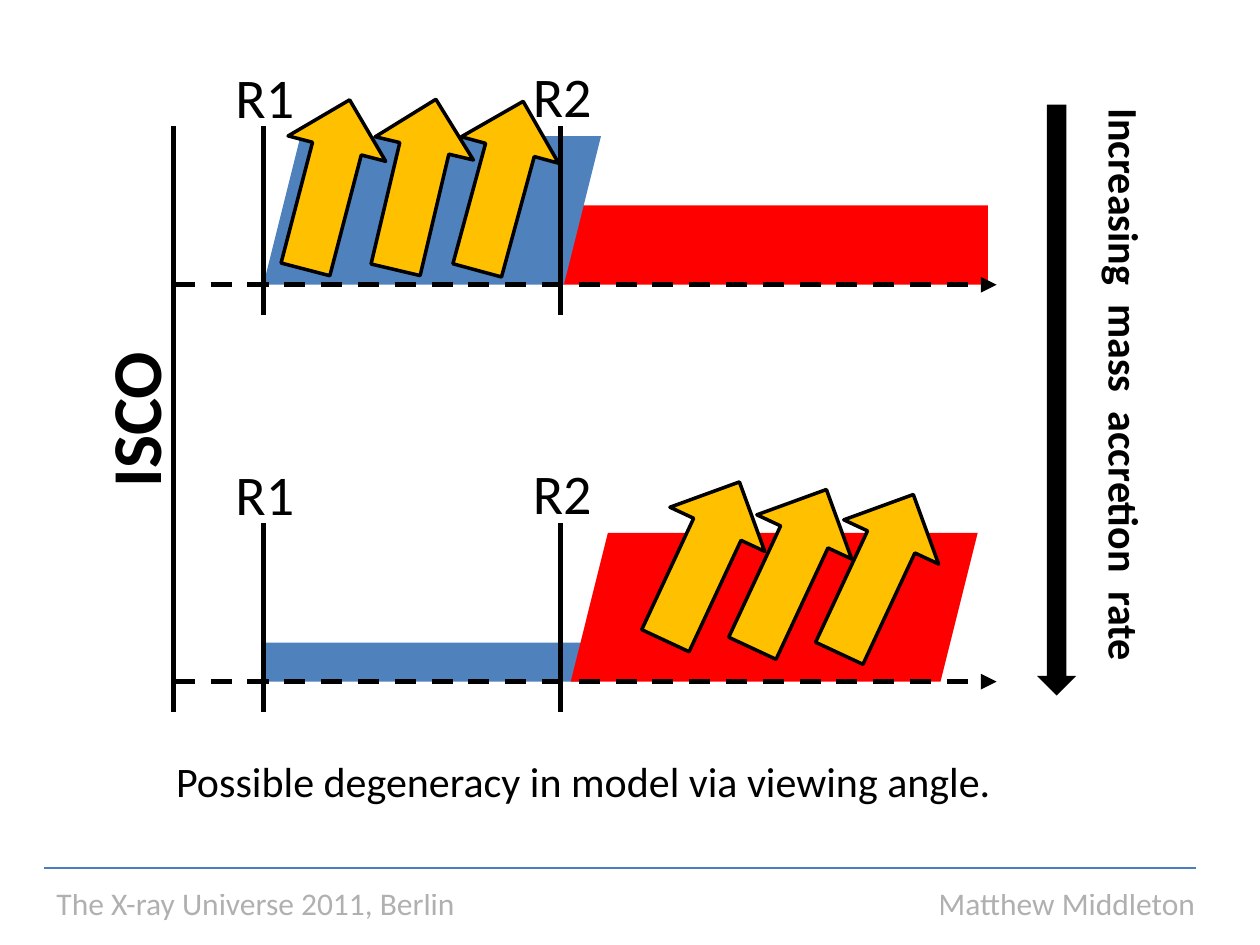
"""Build a slide comparing disc geometry at two mass accretion rates."""
from dataclasses import dataclass

from lxml import etree
from pptx import Presentation
from pptx.dml.color import RGBColor
from pptx.enum.dml import MSO_LINE
from pptx.enum.shapes import MSO_CONNECTOR, MSO_SHAPE
from pptx.enum.text import MSO_AUTO_SIZE
from pptx.oxml.ns import qn
from pptx.util import Inches, Pt

RECT = MSO_SHAPE.RECTANGLE
SLANT = MSO_SHAPE.PARALLELOGRAM
UP = MSO_SHAPE.UP_ARROW
RIGHT = MSO_SHAPE.RIGHT_ARROW
STRAIGHT = MSO_CONNECTOR.STRAIGHT
DASH = MSO_LINE.DASH
GROW = MSO_AUTO_SIZE.SHAPE_TO_FIT_TEXT


@dataclass(frozen=True)
class Theme:
    font: str = "Calibri"
    ink: str = "000000"
    blue: str = "4F81BD"
    red: str = "FF0000"
    gold: str = "FFC000"
    rule: str = "4B7EBC"
    title: int = 40
    label: int = 32
    body: int = 24
    small: int = 18
    thick: float = 3
    edge: float = 2
    thin: float = 0.75
    faint: int = 31


class Board:
    def __init__(self, slide, theme):
        self.slide = slide
        self.theme = theme

    def shape(self, kind, box, fill, turn=0, edge=None):
        item = self.slide.shapes.add_shape(kind, *map(Inches, box))
        item.shadow.inherit = False
        item.rotation = turn
        item.fill.solid()
        item.fill.fore_color.rgb = RGBColor.from_string(fill)
        if edge:
            item.line.color.rgb = RGBColor.from_string(self.theme.ink)
            item.line.width = Pt(edge)
        else:
            item.line.fill.background()

    def line(self, start, end, color, width, axis=False):
        item = self.slide.shapes.add_connector(STRAIGHT, *map(Inches, start + end))
        item.line.color.rgb = RGBColor.from_string(color)
        item.line.width = Pt(width)
        if axis:
            item.line.dash_style = DASH
            pen = item.line._get_or_add_ln()
            etree.SubElement(pen, qn("a:tailEnd"), type="triangle")
        etree.SubElement(item._element.spPr, qn("a:effectLst"))

    def text(self, box, words, size, bold=False, turn=0, faint=None, tabs=()):
        item = self.slide.shapes.add_textbox(*map(Inches, box))
        item.rotation = turn
        frame = item.text_frame
        frame.word_wrap = True
        frame.auto_size = GROW
        para = frame.paragraphs[0]
        run = para.add_run()
        run.text = words
        run.font.name = self.theme.font
        run.font.size = Pt(size)
        run.font.bold = bold
        run.font.color.rgb = RGBColor.from_string(self.theme.ink)
        if faint:
            tint = run._r.find(".//" + qn("a:srgbClr"))
            etree.SubElement(tint, qn("a:alpha"), val=str(faint * 1000))
        if tabs:
            stops = etree.SubElement(para._p.get_or_add_pPr(), qn("a:tabLst"))
            for stop in tabs:
                etree.SubElement(stops, qn("a:tab"), pos=str(Inches(stop)), algn="l")

    def panel(self, top, zones, winds, width):
        look = self.theme
        base = top + 1.26
        for kind, left, wide, high, fill in zones:
            self.shape(kind, (left, base - high, wide, high), fill)
        self.line((2.09, top), (2.09, top + 1.5), look.ink, look.thick)
        self.line((1.38, base), (7.91, base), look.ink, look.thick, axis=True)
        self.line((4.45, top), (4.45, top + 1.5), look.ink, look.thick)
        for left, high, turn in winds:
            self.shape(UP, (left, high, width, 1.39), look.gold, turn, look.edge)
        self.text((1.77, top - 0.55, 0.79, 0.64), "R1", look.label)
        self.text((4.13, top - 0.56, 0.79, 0.64), "R2", look.label)


def main():
    deck = Presentation()
    deck.slide_width, deck.slide_height = Inches(10), Inches(7.5)
    look = Theme()
    board = Board(deck.slides.add_slide(deck.slide_layouts[6]), look)

    board.panel(
        4.15,
        [(RECT, 2.09, 2.6, 0.31, look.blue), (SLANT, 4.53, 3.23, 1.18, look.red)],
        [(5.16, 3.76, 25), (5.85, 3.82, 25), (6.54, 3.86, 25)],
        0.83,
    )
    board.panel(
        1,
        [(RECT, 4.45, 3.39, 0.63, look.red), (SLANT, 2.09, 2.68, 1.18, look.blue)],
        [(2.2, 0.77, 14.6), (2.9, 0.77, 13.3), (3.57, 0.78, 15.2)],
        0.8,
    )
    board.line((1.38, 1), (1.38, 5.65), look.ink, look.thick)
    board.text((0.21, 2.73, 1.7, 0.77), "ISCO", look.title, bold=True, turn=270)

    board.shape(RIGHT, (6.04, 3.02, 4.69, 0.31), look.ink, turn=90)
    board.text((6.57, 2.87, 4.72, 0.5), "Increasing  mass  accretion  rate",
               look.body, bold=True, turn=90)

    board.text((0.35, 6.97, 9.37, 0.4),
               "The X-ray Universe 2011, Berlin\t\t\t\tMatthew Middleton",
               look.small, faint=look.faint, tabs=range(4, 8))
    board.line((0.35, 6.89), (9.49, 6.89), look.rule, look.thin)
    board.text((1.3, 5.95, 6.77, 0.5),
               "Possible degeneracy in model via viewing angle.", look.body)
    deck.save("out.pptx")


if __name__ == "__main__":
    main()
